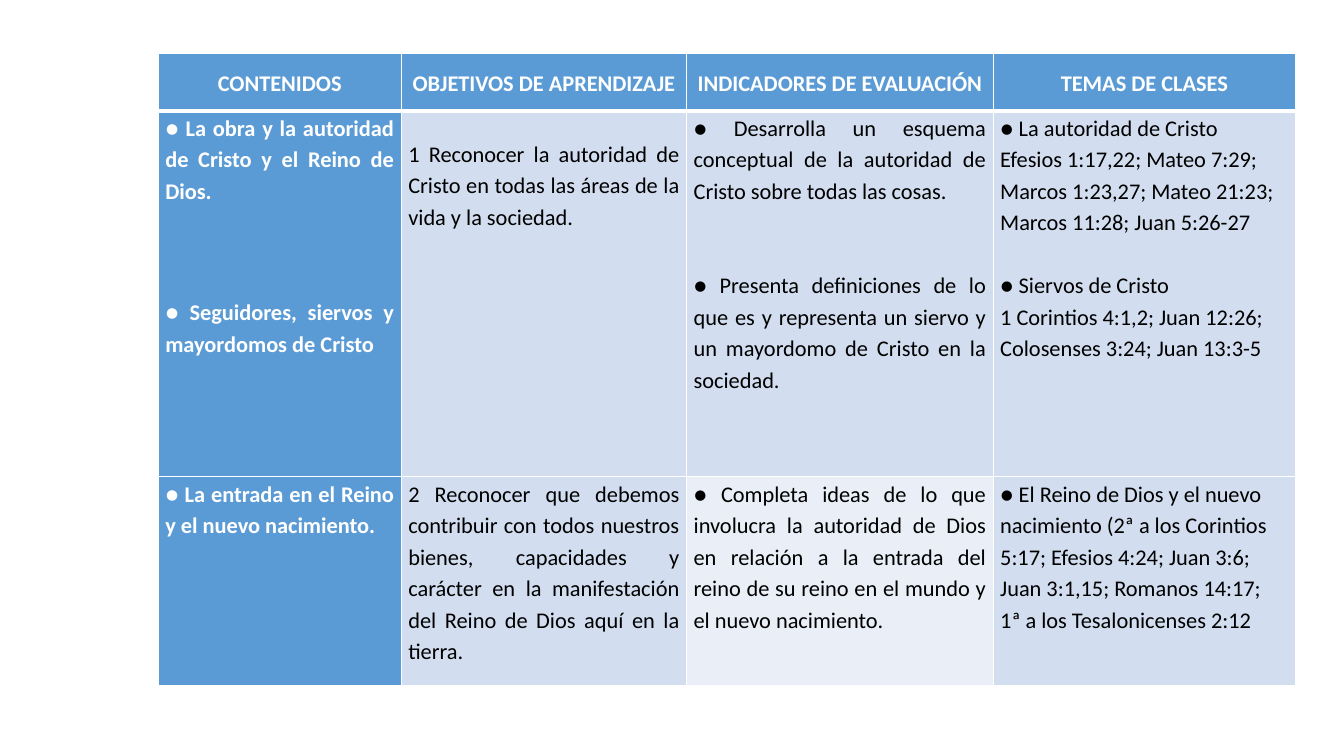
from dataclasses import dataclass

import lxml.etree
import pptx
import pptx.dml.color
import pptx.enum.text
import pptx.oxml.ns
import pptx.util

ALIGN = pptx.enum.text.PP_ALIGN
ANCHOR = pptx.enum.text.MSO_ANCHOR


@dataclass(frozen=True)
class Theme:
    font: str = "Calibri"
    size: int = 16
    line_spacing: float = 1.15
    line_pitch: float = 22.45
    side_margin: float = 0.07
    accent: str = "5B9BD5"
    band: str = "D2DEEF"
    light_band: str = "EAEFF7"
    white: str = "FFFFFF"
    black: str = "000000"
    thin: int = 1
    thick: int = 3


class StudyPlan:
    def __init__(self, theme, width, height):
        self.theme = theme
        self.deck = pptx.Presentation()
        self.deck.slide_width = pptx.util.Inches(width)
        self.deck.slide_height = pptx.util.Inches(height)
        self.slide = self.deck.slides.add_slide(self.deck.slide_layouts[6])

    def across(self, percent):
        return round(self.deck.slide_width * percent / 100)

    def down(self, percent):
        return round(self.deck.slide_height * percent / 100)

    def table(self, left, top, columns, rows):
        frame = self.slide.shapes.add_table(
            len(rows), len(columns), self.across(left), self.down(top),
            self.across(sum(columns)), self.down(sum(rows)))
        plan = frame.table
        plan.horz_banding = False
        plan.first_col = True
        for column, share in zip(plan.columns, columns):
            column.width = self.across(share)
        for row, share in zip(plan.rows, rows):
            row.height = self.down(share)
        return plan

    def borders(self, cell, **widths):
        properties = cell._tc.get_or_add_tcPr()
        qn = pptx.oxml.ns.qn
        for side in "LRTB":
            width = widths.get(side, self.theme.thin)
            line = lxml.etree.SubElement(
                properties, qn(f"a:ln{side}"), w=str(int(pptx.util.Pt(width))))
            fill = lxml.etree.SubElement(line, qn("a:solidFill"))
            lxml.etree.SubElement(fill, qn("a:srgbClr"), val=self.theme.white)

    def fill(self, cell, color):
        cell.fill.solid()
        cell.fill.fore_color.rgb = pptx.dml.color.RGBColor.from_string(color)

    def text(self, cell, entries, align, color, bold, anchor=ANCHOR.TOP, lines_below=0):
        theme = self.theme
        cell.margin_left = cell.margin_right = pptx.util.Inches(theme.side_margin)
        cell.margin_top = 0
        cell.margin_bottom = pptx.util.Pt(lines_below * theme.line_pitch)
        cell.vertical_anchor = anchor
        for index, (wording, lines_above) in enumerate(entries):
            frame = cell.text_frame
            paragraph = frame.add_paragraph() if index else frame.paragraphs[0]
            paragraph.alignment = align
            paragraph.line_spacing = theme.line_spacing
            if lines_above:
                paragraph.space_before = pptx.util.Pt(lines_above * theme.line_pitch)
            run = paragraph.add_run()
            run.text = wording
            run.font.name = theme.font
            run.font.size = pptx.util.Pt(theme.size)
            run.font.bold = bold
            run.font.color.rgb = pptx.dml.color.RGBColor.from_string(color)


HEADINGS = ["CONTENIDOS", "OBJETIVOS DE APRENDIZAJE",
            "INDICADORES DE EVALUACIÓN", "TEMAS DE CLASES"]

UNITS = [
    [
        [("● La obra y la autoridad de Cristo y el Reino de Dios.", 0),
         ("● Seguidores, siervos y mayordomos de Cristo", 2.87)],
        [("1 Reconocer la autoridad de Cristo en todas las áreas de la vida y la sociedad.", 0)],
        [("● Desarrolla un esquema conceptual de la autoridad de Cristo sobre todas las cosas.", 0),
         ("● Presenta definiciones de lo que es y representa un siervo y un mayordomo "
          "de Cristo en la sociedad.", 2)],
        [("● La autoridad de Cristo", 0),
         ("Efesios 1:17,22; Mateo 7:29;", 0),
         ("Marcos 1:23,27; Mateo 21:23;", 0),
         ("Marcos 11:28; Juan 5:26-27", 0),
         ("● Siervos de Cristo", 1),
         ("1 Corintios 4:1,2; Juan 12:26;", 0),
         ("Colosenses 3:24; Juan 13:3-5", 0)],
    ],
    [
        [("● La entrada en el Reino y el nuevo nacimiento.", 0)],
        [("2 Reconocer que debemos contribuir con todos nuestros bienes, capacidades y "
          "carácter en la manifestación del Reino de Dios aquí en la tierra.", 0)],
        [("● Completa ideas de lo que involucra la autoridad de Dios en relación a la "
          "entrada del reino de su reino en el mundo y el nuevo nacimiento.", 0)],
        [("● El Reino de Dios y el nuevo nacimiento (2ª a los Corintios 5:17; "
          "Efesios 4:24; Juan 3:6; Juan 3:1,15; Romanos 14:17;", 0),
         ("1ª a los Tesalonicenses 2:12", 0)],
    ],
]


def main():
    theme = Theme()
    study = StudyPlan(theme, 13.33, 7.5)
    plan = study.table(11.78, 7.07, [18.08, 21.23, 22.81, 22.51], [7.6, 48.4, 27.6])

    for column, heading in enumerate(HEADINGS):
        cell = plan.cell(0, column)
        study.borders(cell, B=theme.thick)
        study.fill(cell, theme.accent)
        study.text(cell, [(heading, 0)], ALIGN.CENTER, theme.white, True, ANCHOR.MIDDLE)

    first_objective, last_indicator = (1, 1), (2, 2)
    for row, unit in enumerate(UNITS, start=1):
        for column, entries in enumerate(unit):
            cell = plan.cell(row, column)
            is_content = column == 0
            shade = theme.light_band if (row, column) == last_indicator else theme.band
            centred = (row, column) == first_objective
            study.borders(cell, T=theme.thick if row == 1 else theme.thin)
            study.fill(cell, theme.accent if is_content else shade)
            study.text(
                cell, entries,
                ALIGN.LEFT if column == len(unit) - 1 else ALIGN.JUSTIFY,
                theme.white if is_content else theme.black, is_content,
                ANCHOR.MIDDLE if centred else ANCHOR.TOP,
                7 if centred else 0)

    study.deck.save("out.pptx")


if __name__ == "__main__":
    main()
